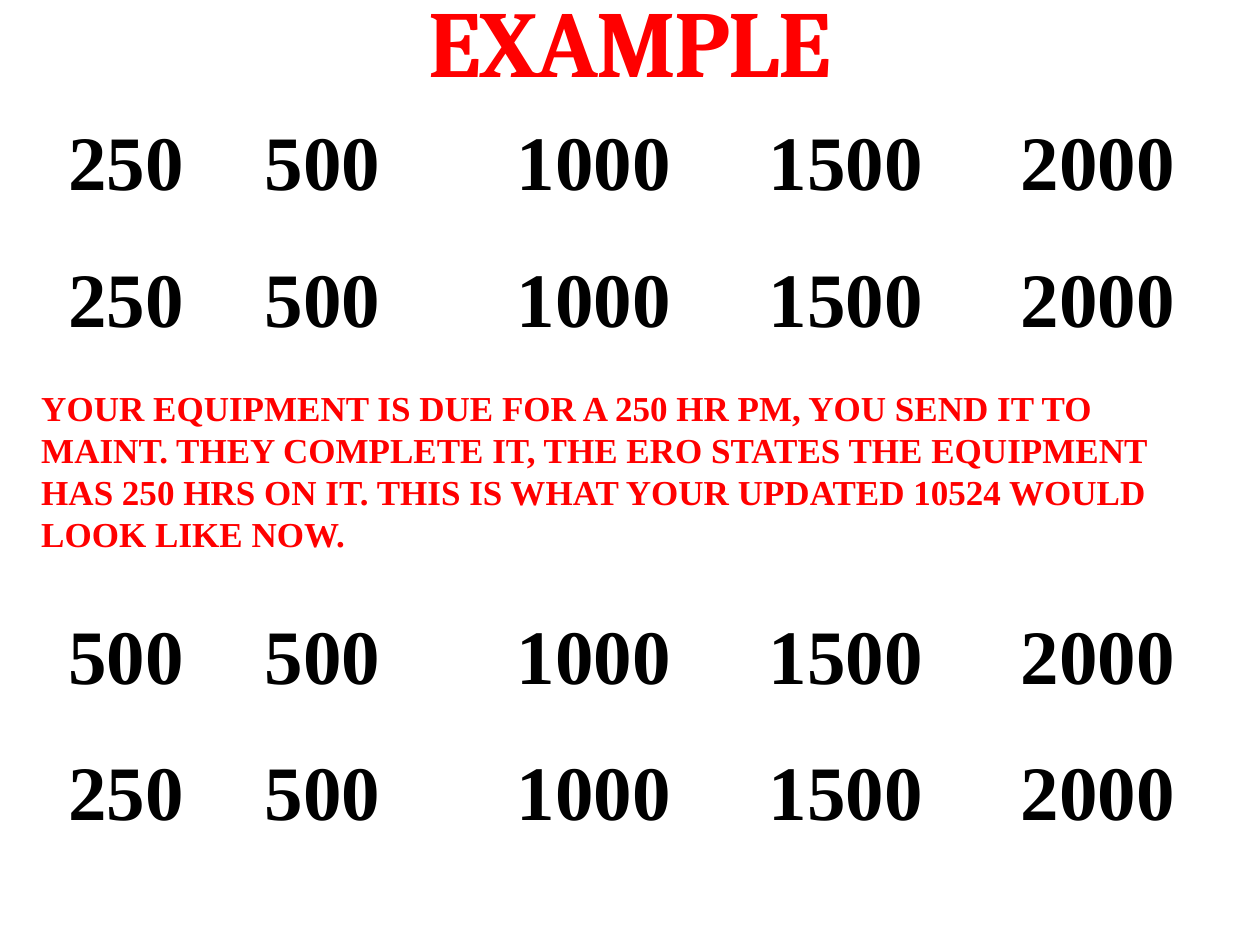
from lxml.etree import SubElement
from pptx import Presentation
from pptx.dml.color import RGBColor
from pptx.enum.text import MSO_ANCHOR, MSO_AUTO_SIZE, PP_ALIGN
from pptx.oxml import parse_xml
from pptx.oxml.ns import nsdecls, qn
from pptx.util import Pt

RED = RGBColor(0xFF, 0x00, 0x00)
BLACK = RGBColor(0x00, 0x00, 0x00)
WHITE = RGBColor(0xFF, 0xFF, 0xFF)
CREAM = RGBColor(0xE0, 0xDD, 0xB1)
SERIF = "Times New Roman"

HOURS = ["250", "500", "1000", "1500", "2000"]
NOTE = [
    "YOUR EQUIPMENT IS DUE FOR A 250 HR PM, YOU SEND IT TO",
    "MAINT. THEY COMPLETE IT, THE ERO STATES THE EQUIPMENT",
    "HAS 250 HRS ON IT. THIS IS WHAT YOUR UPDATED 10524 WOULD",
    "LOOK LIKE NOW.",
]


def add_run(para, text, size, color, font=SERIF):
    run = para.add_run()
    run.text = text
    run.font.name = font
    run.font.size = Pt(size)
    run.font.bold = True
    run.font.color.rgb = color
    return run


def add_box(slide, left, top, width, height):
    box = slide.shapes.add_textbox(Pt(left), Pt(top), Pt(width), Pt(height))
    return box.text_frame


def add_title(slide, text):
    frame = add_box(slide, 54, 16.5, 612, 42)
    frame.word_wrap = True
    frame.vertical_anchor = MSO_ANCHOR.BOTTOM
    para = frame.paragraphs[0]
    para.alignment = PP_ALIGN.CENTER
    run = add_run(para, text, 54, RED, "Cambria")
    # Tight letters with a faint outline
    props = run.font._element
    props.set("spc", "-100")
    props.insert(0, parse_xml(
        f'<a:ln {nsdecls("a")} w="{Pt(0.25)}"><a:solidFill>'
        f'<a:srgbClr val="{CREAM}"><a:alpha val="25000"/></a:srgbClr>'
        '</a:solidFill></a:ln>'))


def add_note(slide, lines):
    frame = add_box(slide, 16.5, 217.5, 657, 103)
    frame.word_wrap = False
    frame.auto_size = MSO_AUTO_SIZE.SHAPE_TO_FIT_TEXT
    for i, line in enumerate(lines):
        para = frame.add_paragraph() if i else frame.paragraphs[0]
        add_run(para, line, 20, RED)


def set_edges(cell):
    props = cell._tc.get_or_add_tcPr()
    for i, side in enumerate("LRTB"):
        props.insert(i, parse_xml(
            f'<a:ln{side} {nsdecls("a")} w="{Pt(1)}"><a:solidFill>'
            f'<a:srgbClr val="{WHITE}"/></a:solidFill></a:ln{side}>'))


def fill_cell(cell, text, align):
    cell.fill.solid()
    cell.fill.fore_color.rgb = WHITE
    set_edges(cell)
    cell.vertical_anchor = MSO_ANCHOR.MIDDLE
    para = cell.text_frame.paragraphs[0]
    para.alignment = align
    # Space before is 20% of the line
    space = SubElement(para._p.get_or_add_pPr(), qn("a:spcBef"))
    SubElement(space, qn("a:spcPct")).set("val", "20000")
    add_run(para, text, 44, BLACK)


def add_grid(slide, top, rows):
    frame = slide.shapes.add_table(
        len(rows), len(HOURS), Pt(0), Pt(top), Pt(720), Pt(156))
    table = frame.table
    table.first_row = table.horz_banding = False
    for row, high in zip(table.rows, (80, 76)):
        row.height = Pt(high)
    for r, row in enumerate(rows):
        for c, text in enumerate(row):
            align = PP_ALIGN.LEFT if c else PP_ALIGN.CENTER
            fill_cell(table.cell(r, c), text, align)


def main():
    deck = Presentation()
    deck.slide_width, deck.slide_height = Pt(720), Pt(540)
    slide = deck.slides.add_slide(deck.slide_layouts[6])

    # Hours before the service
    add_grid(slide, 54, [HOURS, HOURS])
    add_title(slide, "EXAMPLE")
    add_note(slide, NOTE)
    # Hours after it: the first one moves on to 500
    add_grid(slide, 336, [["500"] + HOURS[1:], HOURS])

    deck.save("out.pptx")


if __name__ == "__main__":
    main()
